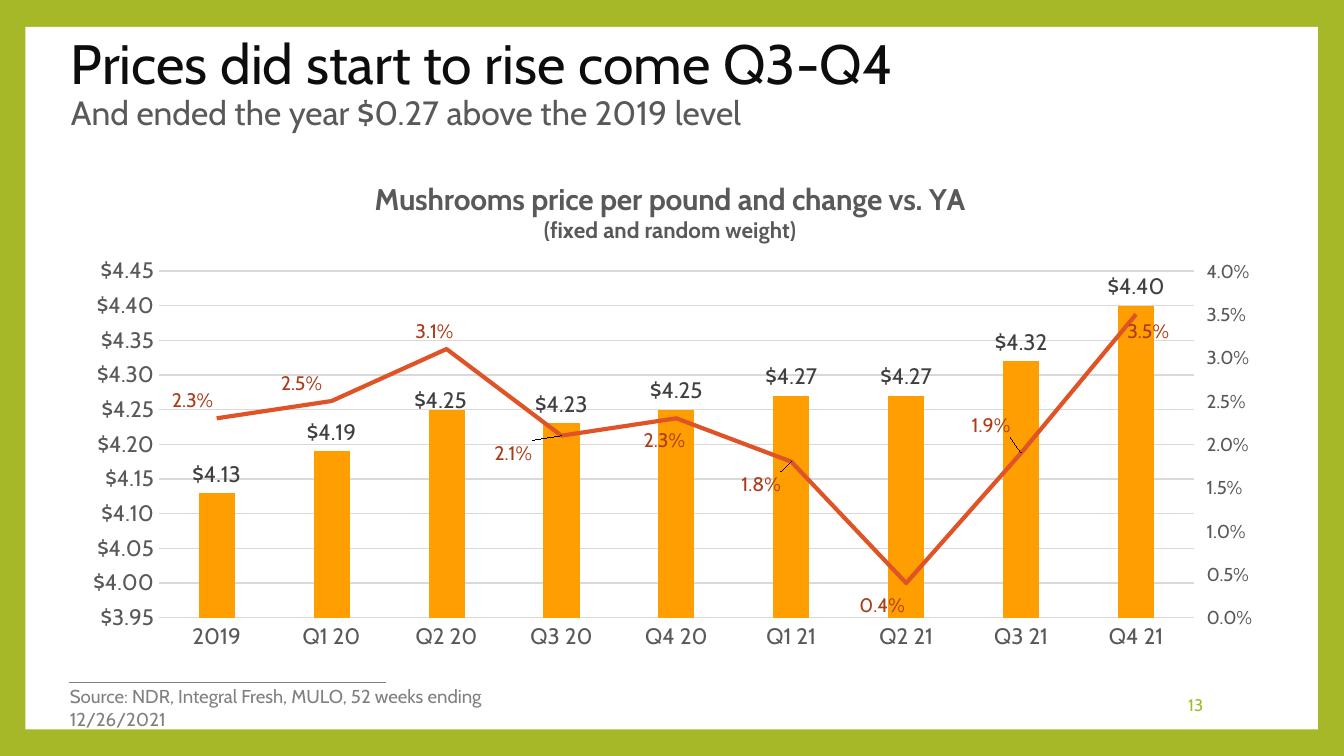
from copy import deepcopy
from typing import NamedTuple

from pptx import Presentation
from pptx.chart.axis import ValueAxis
from pptx.chart.data import CategoryChartData as ChartData
from pptx.dml.color import RGBColor as Rgb
from pptx.enum.chart import XL_CHART_TYPE as Kind, XL_LABEL_POSITION as Pos
from pptx.enum.chart import XL_MARKER_STYLE as Mark, XL_TICK_MARK as Tick
from pptx.enum.shapes import MSO_CONNECTOR as Link, MSO_SHAPE as Shape
from pptx.enum.text import MSO_ANCHOR as Anchor, PP_ALIGN as Align
from pptx.oxml import parse_xml
from pptx.oxml.ns import nsdecls, qn
from pptx.util import Cm, Pt

FONT = "Cabin"
HUES = {
    "green": "A6B727", "white": "FFFFFF", "ink": "0D0D0D", "text": "595959",
    "note": "808080", "grid": "D9D9D9", "bar": "FE9E00", "line": "DF5327",
    "price": "404040", "change": "AB3C19",
}
MONEY = r"\$#,##0.00;\-\$#,##0.00"
RATE = "0.0%"
TERMS = ["2019"] + [f"Q{q} {year}" for year in (20, 21) for q in range(1, 5)]
PRICES = [4.13, 4.19, 4.25, 4.23, 4.25, 4.27, 4.27, 4.32, 4.40]
RATES = [0.023, 0.025, 0.031, 0.021, 0.023, 0.018, 0.004, 0.019, 0.035]


class Box(NamedTuple):
    left: float
    top: float
    width: float
    height: float

    def place(self) -> list:
        return [Cm(side) for side in self]


class Span(NamedTuple):
    text: str
    size: float
    hue: str


class Shift(NamedTuple):
    """Label offset from its normal place, as shares of the chart size."""
    x: float
    y: float


PRICE_SHIFTS = {2: Shift(-0.005, 0.02)}
RATE_SHIFTS = dict(enumerate([
    Shift(-0.02, 0), Shift(-0.025, 0), Shift(-0.01, 0), Shift(-0.04, 0.07), Shift(-0.01, 0.08),
    Shift(-0.025, 0.08), Shift(-0.02, 0.08), Shift(-0.025, -0.02), Shift(0.01, 0.07),
]))


def color(hue: str) -> Rgb:
    return Rgb.from_string(HUES[hue])


def paint(fill, hue: str) -> None:
    fill.solid()
    fill.fore_color.rgb = color(hue)


def style(font, size: float, hue: str, bold: bool = False) -> None:
    font.name, font.size, font.bold = FONT, Pt(size), bold
    font.color.rgb = color(hue)


def write(slide, box: Box, spans: list[Span], anchor=Anchor.TOP, align=Align.LEFT):
    """Add one paragraph with each span on its own line."""
    frame = slide.shapes.add_textbox(*box.place()).text_frame
    frame.word_wrap, frame.vertical_anchor = True, anchor
    para = frame.paragraphs[0]
    para.alignment = align
    for i, span in enumerate(spans):
        if i:
            para.add_line_break()
        run = para.add_run()
        run.text = span.text
        style(run.font, span.size, span.hue)
    return para


def layout(x: float, y: float, size: tuple = (), mode: str = "edge"):
    parts = [("xMode", mode), ("yMode", mode), ("x", x), ("y", y), *zip("wh", size)]
    if size:
        parts.insert(0, ("layoutTarget", "inner"))
    body = "".join(f'<c:{tag} val="{val}"/>' for tag, val in parts)
    return parse_xml(f'<c:layout {nsdecls("c")}><c:manualLayout>{body}</c:manualLayout></c:layout>')


def set_layout(part, new, spot: int) -> None:
    for old in part.findall(qn("c:layout")):
        part.remove(old)
    part.insert(spot, new)


def label(series, pos, form: str, size: float, hue: str, shifts: dict) -> None:
    tags = series.data_labels
    tags.show_value, tags.position = True, pos
    tags.number_format, tags.number_format_is_linked = form, False
    style(tags.font, size, hue)
    for i, shift in shifts.items():
        tag = series.points[i].data_label
        tag.position = pos
        style(tag.font, size, hue)
        node = next(n for n in tags._element.findall(qn("c:dLbl"))
                    if n.find(qn("c:idx")).get("val") == str(i))
        node.insert(1, layout(*shift, mode="factor"))
        node.insert(2, deepcopy(tags._element.find(qn("c:numFmt"))))


def scale(axis, low: float, high: float, step: float, form: str, size: float) -> None:
    axis.minimum_scale, axis.maximum_scale, axis.major_unit = low, high, step
    axis.tick_labels.number_format = form
    axis.tick_labels.number_format_is_linked = False
    style(axis.tick_labels.font, size, "text")
    axis.format.line.fill.background()


def split(chart) -> ValueAxis:
    """Move the second series to a line plot and return its right-hand axis."""
    area = chart._chartSpace.chart.plotArea
    bars = area.find(qn("c:barChart"))
    ser = bars.findall(qn("c:ser"))[1]
    for flag in ser.findall(qn("c:invertIfNegative")):
        ser.remove(flag)
    plot = parse_xml(f'<c:lineChart {nsdecls("c")}><c:grouping val="standard"/>'
                     '<c:varyColors val="0"/><c:marker val="1"/>'
                     '<c:axId val="5001"/><c:axId val="5002"/></c:lineChart>')
    plot.insert(2, ser)
    bars.addnext(plot)
    cat, val = (deepcopy(axis._element) for axis in (chart.category_axis, chart.value_axis))
    chart.value_axis._element.addnext(val)
    val.addnext(cat)
    for axis, own, other in ((cat, "5001", "5002"), (val, "5002", "5001")):
        axis.find(qn("c:axId")).set("val", own)
        axis.find(qn("c:crossAx")).set("val", other)
    cat.find(qn("c:delete")).set("val", "1")
    val.find(qn("c:axPos")).set("val", "r")
    val.find(qn("c:crosses")).set("val", "max")
    return ValueAxis(val)


def add_chart(slide, box: Box) -> None:
    data = ChartData()
    data.categories = TERMS
    data.add_series("Series 1", PRICES, MONEY)
    data.add_series("Series 2", RATES, RATE)
    chart = slide.shapes.add_chart(Kind.COLUMN_CLUSTERED, *box.place(), data).chart
    chart.has_legend = False
    style(chart.font, 10, "ink")

    frame = chart.chart_title.text_frame
    lines = [("Mushrooms price per pound and change vs. YA", 16), ("(fixed and random weight)", 12)]
    for i, (text, size) in enumerate(lines):
        para = frame.add_paragraph() if i else frame.paragraphs[0]
        run = para.add_run()
        run.text = text
        style(run.font, size, "text", bold=True)
    set_layout(chart.chart_title._element, layout(0.25, 0.04), 1)
    set_layout(chart._chartSpace.chart.plotArea, layout(0.075, 0.228, (0.857, 0.688)), 0)

    base, left = chart.category_axis, chart.value_axis
    base.major_tick_mark = left.major_tick_mark = Tick.NONE
    style(base.tick_labels.font, 12, "text")
    scale(left, 3.95, 4.45, 0.05, MONEY, 12)
    for line in (base.format.line, left.major_gridlines.format.line):
        paint(line.fill, "grid")
        line.width = Pt(0.75)

    right = split(chart)
    right.has_major_gridlines = False
    right.major_tick_mark = Tick.OUTSIDE
    scale(right, 0, 0.04, 0.005, RATE, 10)

    bars, trend = chart.plots
    bars.gap_width, bars.overlap, bars.vary_by_categories = 219, -27, False
    price, change = bars.series[0], trend.series[0]
    paint(price.format.fill, "bar")
    label(price, Pos.OUTSIDE_END, MONEY, 12, "price", PRICE_SHIFTS)
    change.smooth = False
    change.marker.style = Mark.NONE
    paint(change.format.line.fill, "line")
    change.format.line.width = Pt(2.25)
    label(change, Pos.ABOVE, RATE, 10.5, "change", RATE_SHIFTS)


def add_frame(slide) -> None:
    paint(slide.background.fill, "green")
    panel = slide.shapes.add_shape(Shape.RECTANGLE, *Box(0.48, 0.51, 24.43, 13.28).place())
    panel.shadow.inherit = False
    paint(panel.fill, "white")
    panel.line.fill.background()
    rule = slide.shapes.add_connector(Link.STRAIGHT, Cm(1.3), Cm(12.9), Cm(7.29), Cm(12.9))
    paint(rule.line.fill, "note")
    rule.line.width = Pt(0.79)
    rule._element.spPr.append(parse_xml(f'<a:effectLst {nsdecls("a")}/>'))


deck = Presentation()
deck.slide_width, deck.slide_height = Cm(25.4), Cm(14.29)
slide = deck.slides.add_slide(deck.slide_layouts[6])
add_frame(slide)
title = write(slide, Box(1.09, 0.91, 23.95, 1.37), [
    Span("Prices did start to rise come Q3-Q4", 29.7, "ink"),
    Span("And ended the year $0.27 above the 2019 level", 18, "text"),
], Anchor.MIDDLE)
title.line_spacing = 0.9
write(slide, Box(19.43, 12.95, 3.56, 0.76), [Span("13", 9, "green")], Anchor.MIDDLE, Align.RIGHT)
add_chart(slide, Box(1.3, 2.95, 22.81, 9.53))
write(slide, Box(1.07, 12.83, 10.13, 0.69), [
    Span("Source: NDR, Integral Fresh, MULO, 52 weeks ending 12/26/2021", 10, "note")])
deck.save("out.pptx")
